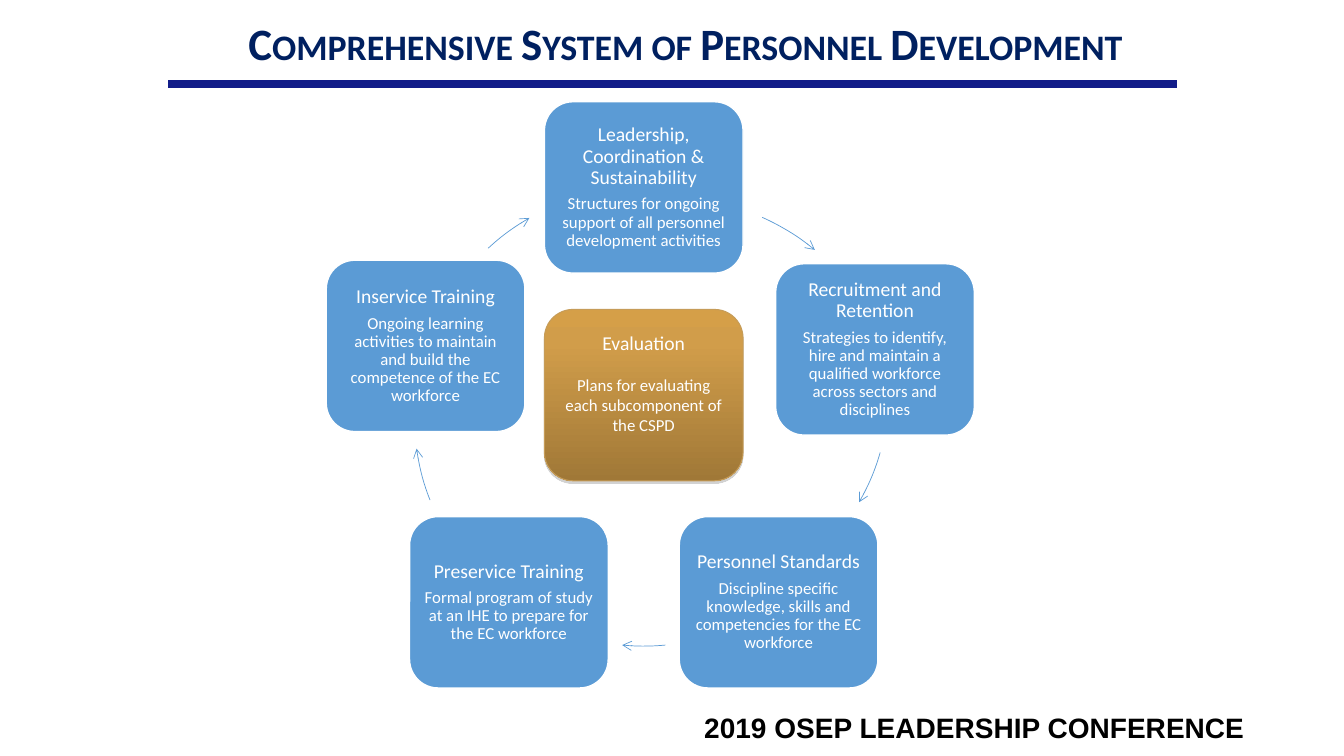
from copy import deepcopy
from math import cos, radians, sin

from lxml import etree
from pptx import Presentation
from pptx.dml.color import RGBColor
from pptx.enum.shapes import MSO_CONNECTOR, MSO_SHAPE
from pptx.enum.text import MSO_ANCHOR, PP_ALIGN
from pptx.oxml.ns import qn
from pptx.util import Inches, Pt

ROUND, ARC, LINE = MSO_SHAPE.ROUNDED_RECTANGLE, MSO_SHAPE.ARC, MSO_CONNECTOR.STRAIGHT
MIDDLE = MSO_ANCHOR.MIDDLE
CENTER, RIGHT = PP_ALIGN.CENTER, PP_ALIGN.RIGHT

COLORS = {
    "white": "FFFFFF", "black": "000000", "navy": "002060", "rule": "121D89",
    "blue": "5B9BD5", "edge": "C69C58", "shade": "808080",
    "gold": "D59F48", "amber": "D19D4A", "brown": "A07837",
}

# Grid: ten cells to the inch
CELL = Inches(0.1)
WIDE, TALL = 19.7, 17
HUB = (63.85, 41.35)
RADIUS = 22.75

# Heading, body, shift from the ring
PARTS = [
    ("Leadership, Coordination & Sustainability",
     "Structures for ongoing support of all personnel development activities", (0, 0)),
    ("Recruitment and Retention",
     "Strategies to identify, hire and maintain a qualified workforce across "
     "sectors and disciplines", (1.3, 0.35)),
    ("Personnel Standards",
     "Discipline specific knowledge, skills and competencies for the EC workforce", (0, 0)),
    ("Preservice Training",
     "Formal program of study at an IHE to prepare for the EC workforce", (0, 0)),
    ("Inservice Training",
     "Ongoing learning activities to maintain and build the competence of the EC workforce",
     (0, 0)),
]
# Start and end angle clockwise from the top, shift from the ring
ARCS = [
    (24, 39.5, (2.5, 1)), (106.2, 119.7, (1.6, -2.8)), (174.6, 185.4, (0, 0)),
    (248.7, 262, (0, 0)), (317.3, 330.1, (0, 0)),
]


def grid(*cells):
    return [round(n * CELL) for n in cells]


def color(name):
    return RGBColor.from_string(COLORS[name])


def spot(angle, shift):
    turn = radians(angle)
    return (HUB[0] + shift[0] + RADIUS * sin(turn),
            HUB[1] + shift[1] - RADIUS * cos(turn))


def write(frame, text, first=False, size=12, font="Calibri", tint="white",
          bold=False, caps=False, align=CENTER, lead=None, before=None, after=None):
    para = frame.paragraphs[0] if first else frame.add_paragraph()
    para.alignment = align
    para.line_spacing = lead
    if before is not None:
        para.space_before = Pt(before)
    if after is not None:
        para.space_after = Pt(after)
    run = para.add_run()
    run.text = text
    run.font.size, run.font.name, run.font.bold = Pt(size), font, bold
    run.font.color.rgb = color(tint)
    if caps:
        run.font._element.set("cap", "small")


def label(slide, text, place, **style):
    frame = slide.shapes.add_textbox(*grid(*place)).text_frame
    frame.word_wrap = True
    write(frame, text, first=True, **style)


def card(slide, mid, edge, width, inset):
    box = slide.shapes.add_shape(
        ROUND, *grid(mid[0] - WIDE / 2, mid[1] - TALL / 2, WIDE, TALL))
    box.shadow.inherit = False
    box.line.color.rgb = color(edge)
    box.line.width = Pt(width)
    frame = box.text_frame
    frame.word_wrap = True
    frame.vertical_anchor = MIDDLE
    frame.margin_left, frame.margin_right, frame.margin_top, frame.margin_bottom = grid(*inset)
    return box


def part(slide, head, body, mid):
    box = card(slide, mid, "white", 1, [0.6] * 4)
    box.fill.solid()
    box.fill.fore_color.rgb = color("blue")
    write(box.text_frame, head, first=True, size=14, lead=0.9, after=4.9)
    write(box.text_frame, body, lead=0.9, after=4.2)


def center(slide):
    box = card(slide, (HUB[0], 39.2), "edge", 0.75, (1, 1, 0.5, 2.9))
    write(box.text_frame, "Evaluation", first=True, size=14)
    write(box.text_frame, "Plans for evaluating each subcomponent of the CSPD", before=14.6)

    # Three-stop gradient from top to bottom
    box.fill.gradient()
    box.fill.gradient_angle = 270
    stops = box._element.spPr.find(".//" + qn("a:gsLst"))
    stops.insert(1, deepcopy(stops[0]))
    for stop, name, share in zip(box.fill.gradient_stops, ("gold", "amber", "brown"), (0, 0.2, 1)):
        stop.color.rgb = color(name)
        stop.position = share

    # Soft shadow below
    glow = box._element.spPr.find(qn("a:effectLst"))
    drop = etree.SubElement(glow, qn("a:outerShdw"), blurRad="0", dist=str(Pt(1.8)),
                            dir="5400000", rotWithShape="0")
    tint = etree.SubElement(drop, qn("a:srgbClr"), val=COLORS["shade"])
    etree.SubElement(tint, qn("a:alpha"), val="35000")


def arc(slide, start, end, shift):
    left, top = (HUB[n] + shift[n] - RADIUS for n in (0, 1))
    curve = slide.shapes.add_shape(ARC, *grid(left, top, 2 * RADIUS, 2 * RADIUS))
    # Arc angles run from the right; one degree is 0.6 of an adjustment unit
    for n, angle in enumerate((start, end)):
        curve.adjustments[n] = (angle - 90) % 360 * 0.6
    curve.shadow.inherit = False
    curve.fill.background()
    curve.line.color.rgb = color("blue")
    curve.line.width = Pt(0.5)
    etree.SubElement(curve.line._get_or_add_ln(), qn("a:tailEnd"), type="arrow")


def rule(slide, left, right, top):
    bar = slide.shapes.add_connector(LINE, *grid(left, top, right, top))
    bar.line.color.rgb = color("rule")
    bar.line.width = Pt(6)
    etree.SubElement(bar._element.spPr, qn("a:effectLst"))


def main():
    deck = Presentation()
    deck.slide_width, deck.slide_height = Inches(13.33), Inches(7.5)
    slide = deck.slides.add_slide(deck.slide_layouts[6])

    # Footer and title
    label(slide, "2019 OSEP LEADERSHIP CONFERENCE", (66.7, 70, 57.7, 4.4),
          size=20, font="Arial", tint="black", bold=True, align=RIGHT)
    label(slide, "Comprehensive System of Personnel Development", (18, 1.1, 100, 6.4),
          size=32, tint="navy", bold=True, caps=True)

    # Ring of parts with arrows between
    for n, (head, body, shift) in enumerate(PARTS):
        part(slide, head, body, spot(n * 360 / len(PARTS), shift))
        arc(slide, *ARCS[n])

    center(slide)
    rule(slide, 16.7, 116.7, 8.33)
    deck.save("out.pptx")


if __name__ == "__main__":
    main()
